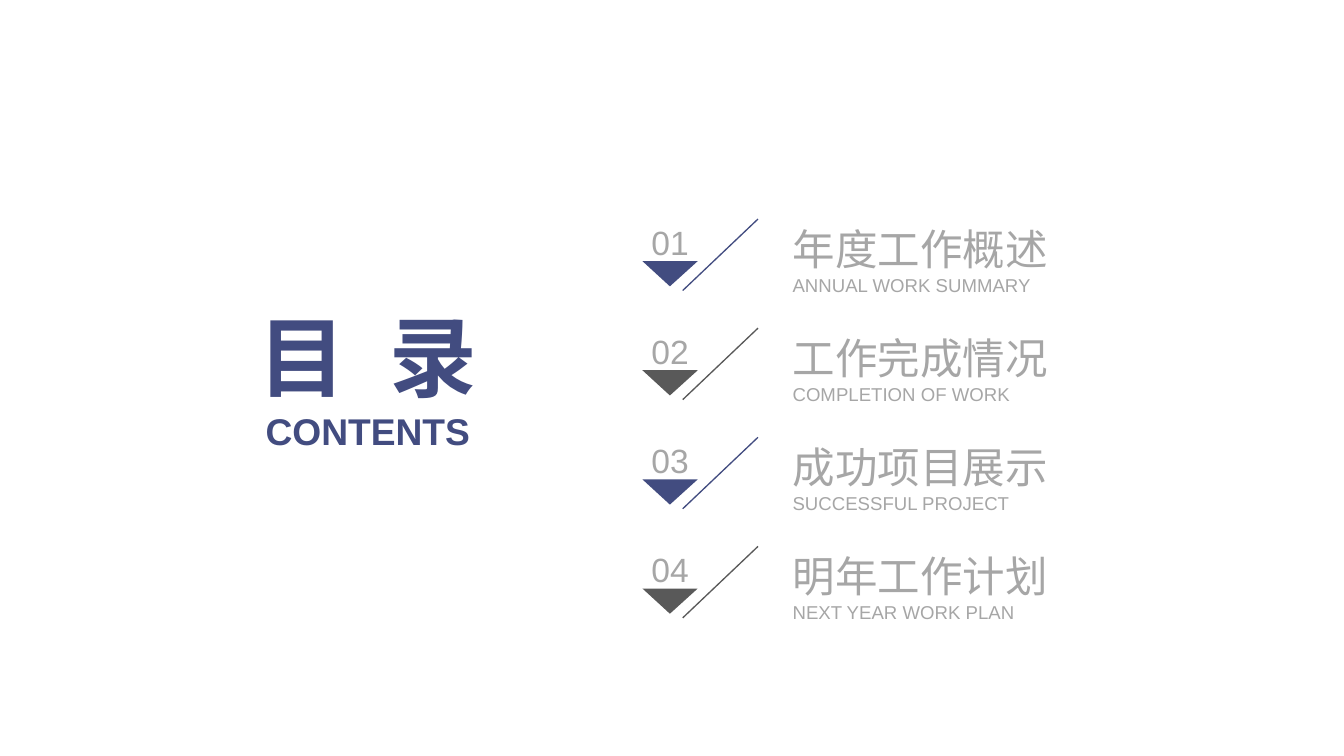
from lxml import etree
from pptx import Presentation
from pptx.dml.color import RGBColor
from pptx.enum import shapes, text
from pptx.oxml.ns import qn
from pptx.util import Cm, Pt

NAVY = RGBColor(0x42, 0x4C, 0x80)
DARK = RGBColor(0x59, 0x59, 0x59)
GREY = RGBColor(0xA6, 0xA6, 0xA6)

ITEMS = [
    ("年度工作概述", "ANNUAL WORK SUMMARY"),
    ("工作完成情况", "COMPLETION OF WORK"),
    ("成功项目展示", "SUCCESSFUL PROJECT"),
    ("明年工作计划", "NEXT YEAR WORK PLAN"),
]
TOP, PITCH = 5.82, 2.9


def write(sp, lines, color, anchor, align, bold=False):
    """Fill a shape with one paragraph per (text, point size) pair."""
    tf = sp.text_frame
    frame = {"word_wrap": True, "vertical_anchor": anchor,
             "auto_size": text.MSO_AUTO_SIZE.NONE,
             "margin_left": 0, "margin_right": 0,
             "margin_top": 0, "margin_bottom": 0}
    for name, value in frame.items():
        setattr(tf, name, value)
    for i, (words, size) in enumerate(lines):
        p = tf.add_paragraph() if i else tf.paragraphs[0]
        p.alignment = align
        r = p.add_run()
        r.text = words
        font = {"name": "Arial", "size": Pt(size), "bold": bold}
        for name, value in font.items():
            setattr(r.font, name, value)
        r.font.color.rgb = color


prs = Presentation()
prs.slide_width, prs.slide_height = Cm(35.71), Cm(20.09)
s = prs.slides.add_slide(prs.slide_layouts[5])
LEFT, CENTER = text.PP_ALIGN.LEFT, text.PP_ALIGN.CENTER
ANCHOR = text.MSO_ANCHOR

# Heading
title = s.shapes.title
title.left, title.top, title.width, title.height = Cm(5.8), Cm(8.03), Cm(7.96), Cm(2.82)
write(title, [("目 录", 66)], NAVY, ANCHOR.MIDDLE, CENTER, bold=True)
# Letter spacing widens the gap between the two characters
title.text_frame.paragraphs[0].runs[0]._r.get_or_add_rPr().set("spc", "900")

subtitle = s.shapes.add_textbox(Cm(5.82), Cm(10.85), Cm(7.9), Cm(1.19))
write(subtitle, [("CONTENTS", 28)], NAVY, ANCHOR.TOP, CENTER, bold=True)

# Agenda entries
for i, (heading, english) in enumerate(ITEMS):
    y = TOP + i * PITCH
    color = DARK if i % 2 else NAVY

    entry = s.shapes.add_textbox(Cm(21.06), Cm(y + 0.1), Cm(8.51), Cm(1.96))
    write(entry, [(heading, 32), (english, 14)], GREY, ANCHOR.MIDDLE, LEFT)

    marker = s.shapes.add_group_shape()
    slash = marker.shapes.add_connector(
        shapes.MSO_CONNECTOR.STRAIGHT, Cm(20.14), Cm(y), Cm(18.14), Cm(y + 1.9))
    slash.line.color.rgb = color
    slash.line.width = Pt(1)
    etree.SubElement(slash._element.spPr, qn("a:effectLst"))

    fb = marker.shapes.build_freeform(Cm(17.07), Cm(y + 1.12))
    fb.add_line_segments([(Cm(18.54), Cm(y + 1.12)), (Cm(17.8), Cm(y + 1.79))])
    triangle = fb.convert_to_shape()
    triangle.fill.solid()
    triangle.fill.fore_color.rgb = color
    triangle.line.fill.background()
    triangle.shadow.inherit = False

    number = marker.shapes.add_textbox(Cm(17.02), Cm(y + 0.05), Cm(1.57), Cm(1.09))
    write(number, [(f"{i + 1:02d}", 25.3)], GREY, ANCHOR.BOTTOM, CENTER)

prs.save("out.pptx")
